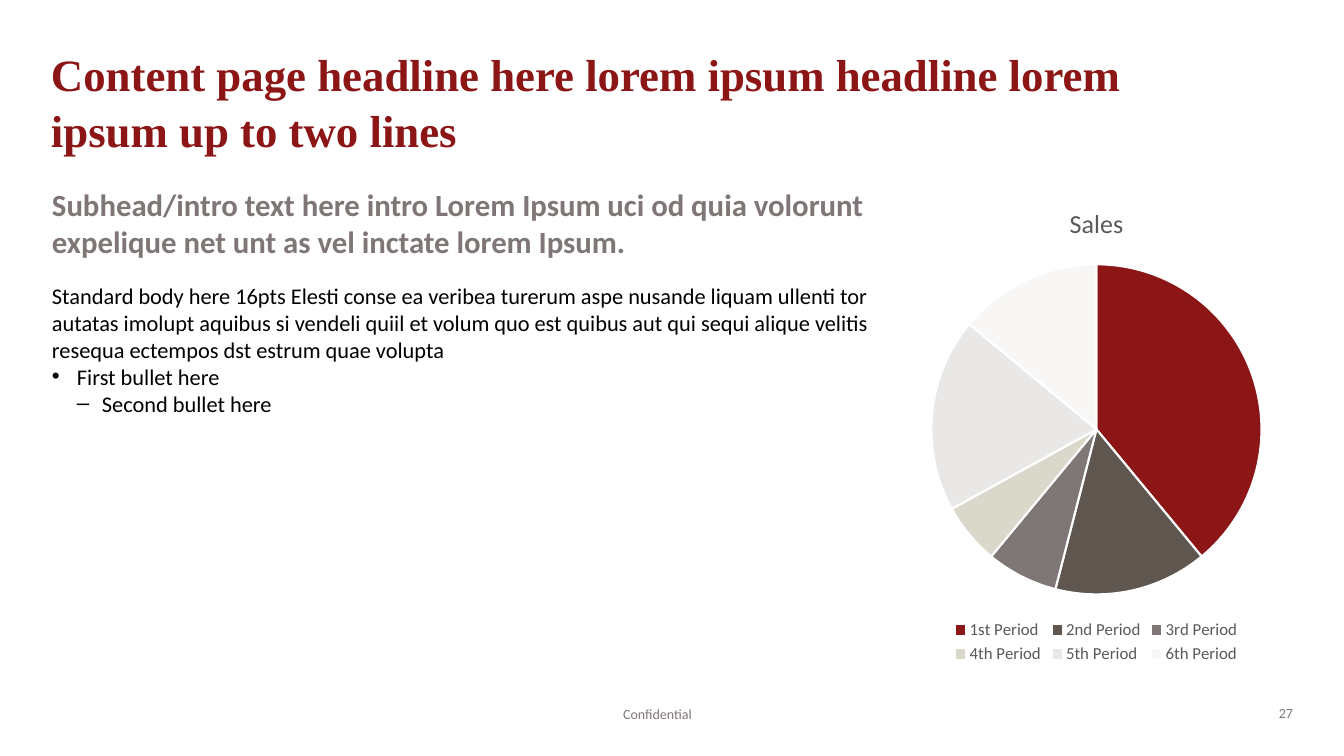
from lxml import etree
from pptx import Presentation
from pptx.chart.data import CategoryChartData
from pptx.dml.color import RGBColor
from pptx.enum.chart import XL_CHART_TYPE, XL_LEGEND_POSITION
from pptx.enum.text import MSO_ANCHOR, MSO_AUTO_SIZE, PP_ALIGN
from pptx.oxml.ns import qn
from pptx.util import Emu, Pt

PIE, LEGEND_BOTTOM = XL_CHART_TYPE.PIE, XL_LEGEND_POSITION.BOTTOM
TOP, BOTTOM = MSO_ANCHOR.TOP, MSO_ANCHOR.BOTTOM
LEFT, CENTER, RIGHT = PP_ALIGN.LEFT, PP_ALIGN.CENTER, PP_ALIGN.RIGHT

# Content
TITLE = "Content page headline here lorem ipsum headline lorem ipsum up to two lines"
SUBHEAD = ("Subhead/intro text here intro Lorem Ipsum uci od quia volorunt "
           "expelique net unt as vel inctate lorem Ipsum.")
INTRO = ("Standard body here 16pts Elesti conse ea veribea turerum aspe nusande "
         "liquam ullenti tor autatas imolupt aquibus si vendeli quiil et volum quo "
         "est quibus aut qui sequi alique velitis resequa ectempos dst estrum quae volupta")
RED, GREY, BLACK, DARK, WHITE = "8C1515", "7F7776", "000000", "595959", "FFFFFF"
BODY = [
    (SUBHEAD, dict(size=22, color=GREY, bold=True, after=16)),
    (INTRO, {}),
    ("First bullet here", dict(level=1, bullet="•")),
    ("Second bullet here", dict(level=2, bullet="–")),
]
FOOTERS = [
    ("Confidential", (446, 700, 423, 22), CENTER),
    ("27", (1251, 700, 42, 21), RIGHT),
]
SALES = [
    ("1st Period", 39, RED),
    ("2nd Period", 15, "5F574F"),
    ("3rd Period", 7, GREY),
    ("4th Period", 6, "DAD7CB"),
    ("5th Period", 19, "E9E8E6"),
    ("6th Period", 14, "F8F7F5"),
]

# Geometry in px
SLIDE = (1344, 756)
TITLE_BOX = (51, 45, 1242, 112)
BODY_BOX = (52, 186, 817, 482)
CHART_BOX = (900, 186, 393, 482)
PIE_PART = dict(x=0.08, y=0.16, w=0.84, h=0.69)  # shares of the chart
INDENT = 25


def px(n):
    return Emu(round(n * 914400 / 100.8))


def rgb(value):
    return RGBColor.from_string(value)


def set_font(font, size, color, name="Calibri", bold=False):
    font.size, font.name, font.bold = Pt(size), name, bold
    font.color.rgb = rgb(color)


def set_frame(shape, box, anchor=TOP, right=0):
    shape.left, shape.top, shape.width, shape.height = map(px, box)
    tf = shape.text_frame
    tf.word_wrap, tf.auto_size, tf.vertical_anchor = True, MSO_AUTO_SIZE.NONE, anchor
    tf.margin_left = tf.margin_top = tf.margin_bottom = 0
    tf.margin_right = px(right)
    return tf


def write(p, text, size=16, color=BLACK, name="Calibri", bold=False,
          align=LEFT, after=0, spacing=1.0, level=0, bullet=None):
    p.level, p.alignment, p.line_spacing = level, align, spacing
    p.space_before, p.space_after = Pt(0), Pt(after)
    pPr = p._p.get_or_add_pPr()
    pPr.set("marL", str(px(INDENT * level)))
    pPr.set("indent", str(px(-INDENT if bullet else 0)))
    if bullet:
        bu_color = etree.SubElement(pPr, qn("a:buClr"))
        etree.SubElement(bu_color, qn("a:srgbClr"), val=color)
        etree.SubElement(pPr, qn("a:buFont"), typeface="Arial")
        etree.SubElement(pPr, qn("a:buChar"), char=bullet)
    else:
        etree.SubElement(pPr, qn("a:buNone"))
    r = p.add_run()
    r.text = text
    set_font(r.font, size, color, name, bold)


prs = Presentation()
prs.slide_width, prs.slide_height = map(px, SLIDE)
s = prs.slides.add_slide(prs.slide_layouts[1])

# Title
tf = set_frame(s.shapes.title, TITLE_BOX, BOTTOM, right=151)
write(tf.paragraphs[0], TITLE, size=32, color=RED, name="Times New Roman",
      bold=True, spacing=1.05)

# Body text
tf = set_frame(s.placeholders[1], BODY_BOX)
for i, (text, fmt) in enumerate(BODY):
    write(tf.add_paragraph() if i else tf.paragraphs[0], text, **fmt)

# Sales pie
data = CategoryChartData()
data.categories = [period for period, _, _ in SALES]
data.add_series("Sales", [value for _, value, _ in SALES])
chart = s.shapes.add_chart(PIE, *map(px, CHART_BOX), data).chart
set_font(chart.font, 10, BLACK)
chart.has_title = True
p = chart.chart_title.text_frame.paragraphs[0]
r = p.add_run()
r.text = "Sales"
set_font(r.font, 18.6, DARK)
chart.chart_title.include_in_layout = False
chart.has_legend = True
chart.legend.position = LEGEND_BOTTOM
chart.legend.include_in_layout = False
set_font(chart.legend.font, 12, DARK)
plot = chart.plots[0]
plot.vary_by_categories = True
for i, (_, _, color) in enumerate(SALES):
    fmt = plot.series[0].points[i].format
    fmt.fill.solid()
    fmt.fill.fore_color.rgb = rgb(color)
    fmt.line.color.rgb = rgb(WHITE)
    fmt.line.width = Pt(1.5)

# Pie position inside the chart
area = chart._chartSpace.find(".//" + qn("c:plotArea"))
layout = area.find(qn("c:layout"))
if layout is None:
    layout = etree.Element(qn("c:layout"))
    area.insert(0, layout)
manual = etree.SubElement(layout, qn("c:manualLayout"))
etree.SubElement(manual, qn("c:layoutTarget"), val="inner")
for side in "xy":
    etree.SubElement(manual, qn(f"c:{side}Mode"), val="edge")
for side, share in PIE_PART.items():
    etree.SubElement(manual, qn(f"c:{side}"), val=str(share))

# Footer and page number
for text, box, align in FOOTERS:
    tf = set_frame(s.shapes.add_textbox(*map(px, box)), box, BOTTOM)
    write(tf.paragraphs[0], text, size=10, color=GREY, align=align)

prs.save("out.pptx")
